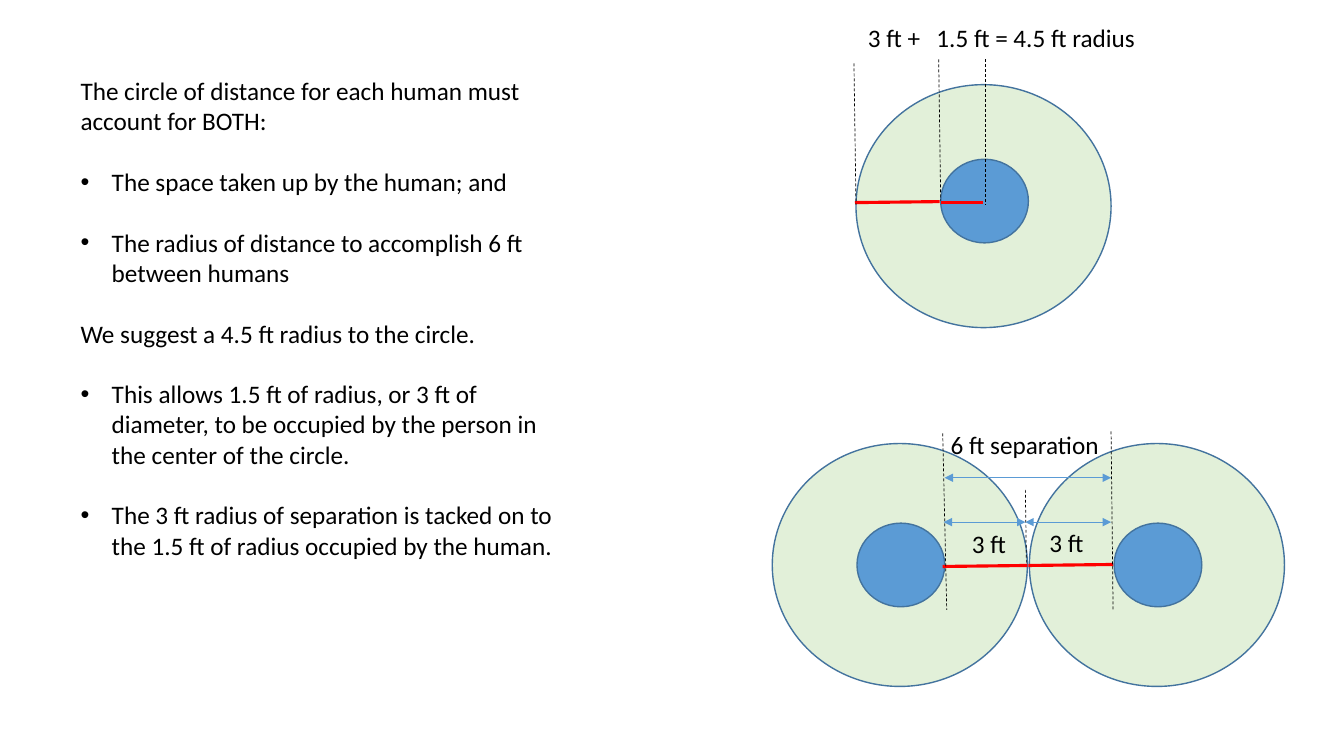
from dataclasses import dataclass
from typing import Optional

from lxml.etree import SubElement
from pptx import Presentation
from pptx.dml.color import RGBColor
from pptx.enum.dml import MSO_LINE
from pptx.enum.shapes import MSO_CONNECTOR, MSO_SHAPE
from pptx.enum.text import MSO_AUTO_SIZE
from pptx.oxml.ns import qn
from pptx.util import Emu, Pt

EMU_PER_PX = 9144
COLORS = {
    "text": "000000",
    "distance": "E2F0D9",
    "human": "5B9BD5",
    "outline": "43739E",
    "radius": "FF0000",
    "guide": "000000",
    "arrow": "5B9BD5",
}
FONT = {"name": "Calibri", "size": Pt(18)}
FRAME = {"word_wrap": True, "auto_size": MSO_AUTO_SIZE.SHAPE_TO_FIT_TEXT}
BULLET_INDENT = 31
PARAGRAPH_GAP = Pt(21.7)
DISTANCE_SIZE = (253, 241)
HUMAN_SIZE = (87, 83)
HUMAN_INSET = 84


@dataclass
class Person:
    left: int
    top: int
    human_drop: int


@dataclass
class LineStyle:
    color: str
    width: float
    dash: Optional[MSO_LINE] = None
    arrows: bool = False


@dataclass
class Segment:
    style: LineStyle
    x1: int
    y1: int
    x2: int
    y2: int


@dataclass
class Paragraph:
    text: str
    bullet: bool = False


@dataclass
class Label:
    left: int
    top: int
    width: int
    height: int
    paragraphs: list[Paragraph]
    tab: int = 0


RADIUS = LineStyle("radius", 2.25)
GUIDE = LineStyle("guide", 0.5, MSO_LINE.DASH)
SPAN = LineStyle("arrow", 0.5, arrows=True)

PEOPLE = [Person(849, 84, 74), Person(1021, 440, 79), Person(766, 440, 79)]
SEGMENTS = [
    Segment(RADIUS, 848, 201, 932, 200),
    Segment(RADIUS, 933, 201, 975, 201),
    Segment(GUIDE, 847, 63, 849, 203),
    Segment(GUIDE, 931, 59, 933, 199),
    Segment(GUIDE, 977, 59, 977, 203),
    Segment(RADIUS, 935, 562, 1019, 561),
    Segment(RADIUS, 1020, 561, 1104, 560),
    Segment(GUIDE, 935, 430, 939, 605),
    Segment(GUIDE, 1017, 486, 1018, 558),
    Segment(GUIDE, 1102, 428, 1104, 605),
    Segment(SPAN, 936, 518, 1017, 518),
    Segment(SPAN, 1017, 518, 1102, 518),
    Segment(SPAN, 937, 474, 1102, 474),
]
LABELS = [
    Label(70, 70, 492, 525, [
        Paragraph("The circle of distance for each human must account for BOTH:"),
        Paragraph("The space taken up by the human; and", True),
        Paragraph("The radius of distance to accomplish 6 ft between humans", True),
        Paragraph("We suggest a 4.5 ft radius to the circle."),
        Paragraph("This allows 1.5 ft of radius, or 3 ft of diameter, to be occupied "
                  "by the person in the center of the circle.", True),
        Paragraph("The 3 ft radius of separation is tacked on to the 1.5 ft of radius "
                  "occupied by the human.", True),
    ]),
    Label(851, 17, 342, 40, [Paragraph("3 ft +\t1.5 ft = 4.5 ft radius")], tab=68),
    Label(954, 519, 61, 40, [Paragraph("3 ft")]),
    Label(1031, 518, 61, 40, [Paragraph("3 ft")]),
    Label(933, 421, 187, 40, [Paragraph("6 ft separation")]),
]


def px(length: int) -> Emu:
    return Emu(length * EMU_PER_PX)


def rgb(name: str) -> RGBColor:
    return RGBColor.from_string(COLORS[name])


def apply(target, values: dict) -> None:
    for name, value in values.items():
        setattr(target, name, value)


def draw_circle(slide, left: int, top: int, size: tuple[int, int], color: str) -> None:
    circle = slide.shapes.add_shape(MSO_SHAPE.OVAL, *map(px, (left, top, *size)))
    circle.shadow.inherit = False
    circle.fill.solid()
    circle.fill.fore_color.rgb = rgb(color)
    circle.line.color.rgb = rgb("outline")
    circle.line.width = Pt(1)


def draw_person(slide, person: Person) -> None:
    draw_circle(slide, person.left, person.top, DISTANCE_SIZE, "distance")
    draw_circle(slide, person.left + HUMAN_INSET, person.top + person.human_drop,
                HUMAN_SIZE, "human")


def draw_segment(slide, segment: Segment) -> None:
    ends = map(px, (segment.x1, segment.y1, segment.x2, segment.y2))
    connector = slide.shapes.add_connector(MSO_CONNECTOR.STRAIGHT, *ends)
    style = segment.style
    connector.line.color.rgb = rgb(style.color)
    apply(connector.line, {"width": Pt(style.width), "dash_style": style.dash})
    if style.arrows:
        for end in ("a:headEnd", "a:tailEnd"):
            SubElement(connector.line._get_or_add_ln(), qn(end), type="triangle")
    SubElement(connector._element.spPr, qn("a:effectLst"))


def draw_label(slide, label: Label) -> None:
    bounds = map(px, (label.left, label.top, label.width, label.height))
    frame = slide.shapes.add_textbox(*bounds).text_frame
    apply(frame, FRAME)
    for index, content in enumerate(label.paragraphs):
        line = frame.add_paragraph() if index else frame.paragraphs[0]
        run = line.add_run()
        run.text = content.text
        apply(run.font, FONT)
        run.font.color.rgb = rgb("text")
        if index:
            line.space_before = PARAGRAPH_GAP
        properties = line._p.get_or_add_pPr()
        if content.bullet:
            properties.set("marL", str(px(BULLET_INDENT)))
            properties.set("indent", str(-px(BULLET_INDENT)))
            SubElement(properties, qn("a:buFont"), typeface="Arial")
            SubElement(properties, qn("a:buChar"), char="•")
        if label.tab:
            tabs = SubElement(properties, qn("a:tabLst"))
            SubElement(tabs, qn("a:tab"), pos=str(px(label.tab)), algn="l")


def main() -> None:
    deck = Presentation()
    apply(deck, {"slide_width": px(1333), "slide_height": px(750)})
    slide = deck.slides.add_slide(deck.slide_layouts.get_by_name("Blank"))
    for person in PEOPLE:
        draw_person(slide, person)
    for segment in SEGMENTS:
        draw_segment(slide, segment)
    for label in LABELS:
        draw_label(slide, label)
    deck.save("out.pptx")


if __name__ == "__main__":
    main()
